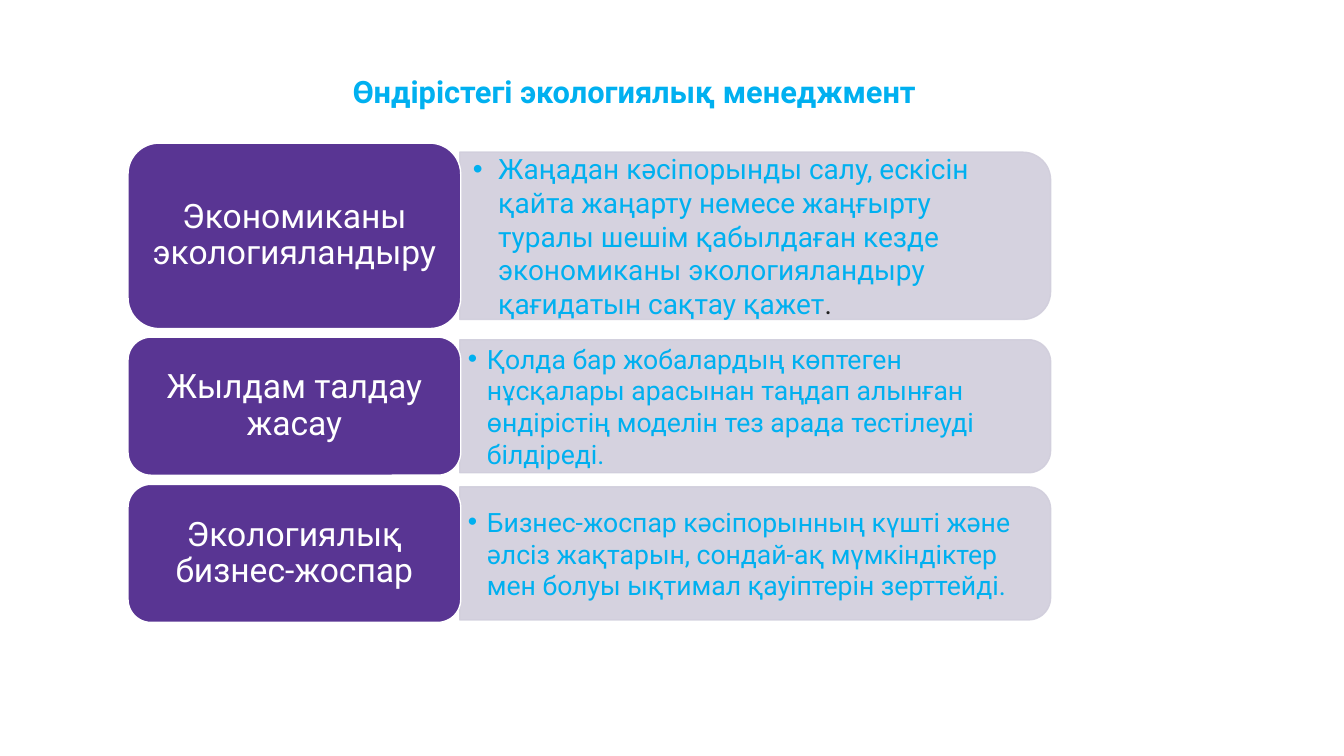
from dataclasses import dataclass

from lxml import etree
from pptx import Presentation
from pptx.dml.color import RGBColor
from pptx.enum import shapes, text
from pptx.oxml import ns
from pptx.util import Inches, Pt

SKY = RGBColor(0x00, 0xB0, 0xF0)
PURPLE = RGBColor(0x59, 0x35, 0x93)
LILAC = RGBColor(0xD1, 0xCE, 0xDC)
WHITE = RGBColor(0xFF, 0xFF, 0xFF)
DARK = RGBColor(0x20, 0x20, 0x20)

FONT = "Roboto"
LABEL_LEFT, LABEL_WIDTH = 1.27, 3.3
PANEL_LEFT, PANEL_WIDTH = 4.56, 5.86
DETAIL_WIDTH = 5.78


@dataclass(frozen=True)
class Row:
    label: str
    detail: str
    center: float
    label_height: float
    panel_height: float
    detail_height: float
    detail_size: int
    indent: float
    inset_x: float
    inset_y: float
    ending: str = ""


ROWS = [
    Row("Экономиканы экологияландыру",
        "Жаңадан кәсіпорынды салу, ескісін қайта жаңарту немесе жаңғырту туралы "
        "шешім қабылдаған кезде экономиканы экологияландыру қағидатын сақтау қажет",
        2.34, 1.84, 1.66, 1.49, 20, 0.25, 0.13, 0.07, "."),
    Row("Жылдам талдау жасау",
        "Қолда бар жобалардың көптеген нұсқалары арасынан таңдап алынған "
        "өндірістің моделін тез арада тестілеуді білдіреді.",
        4.03, 1.37, 1.32, 1.19, 19, 0.19, 0.08, 0.04),
    Row("Экологиялық бизнес-жоспар",
        "Бизнес-жоспар кәсіпорынның күшті және әлсіз жақтарын, сондай-ақ "
        "мүмкіндіктер мен болуы ықтимал қауіптерін зерттейді.",
        5.49, 1.37, 1.32, 1.19, 19, 0.19, 0.08, 0.04),
]


def apply(target, values: dict) -> None:
    for name, value in values.items():
        setattr(target, name, value)


def add_run(p, words: str, size: int, color: RGBColor, bold: bool = False) -> None:
    r = p.add_run()
    r.text = words
    apply(r.font, {"name": FONT, "size": Pt(size), "bold": bold})
    r.font.color.rgb = color


def add_block(s, kind, left: float, top: float, width: float, height: float,
              fill: RGBColor, line: RGBColor):
    sp = s.shapes.add_shape(kind, Inches(left), Inches(top), Inches(width), Inches(height))
    sp.shadow.inherit = False
    sp.fill.solid()
    sp.fill.fore_color.rgb = fill
    sp.line.color.rgb = line
    sp.line.width = Pt(1)
    return sp


def add_panel(s, row: Row) -> None:
    left = PANEL_LEFT + (PANEL_WIDTH - row.panel_height) / 2
    sp = add_block(s, shapes.MSO_SHAPE.ROUND_2_SAME_RECTANGLE, left,
                   row.center - PANEL_WIDTH / 2, row.panel_height, PANEL_WIDTH, LILAC, LILAC)
    sp.rotation = 90
    for color in sp.fill._xPr.iter(ns.qn("a:srgbClr")):
        etree.SubElement(color, ns.qn("a:alpha"), val="90000")


def add_detail(s, row: Row) -> None:
    sp = s.shapes.add_textbox(Inches(PANEL_LEFT), Inches(row.center - row.detail_height / 2),
                              Inches(DETAIL_WIDTH), Inches(row.detail_height))
    tf = sp.text_frame
    x, y = Inches(row.inset_x), Inches(row.inset_y)
    apply(tf, {"word_wrap": True, "vertical_anchor": text.MSO_ANCHOR.MIDDLE,
               "margin_left": x, "margin_right": x, "margin_top": y, "margin_bottom": y})
    p = tf.paragraphs[0]
    p.level = 1
    pPr = p._p.get_or_add_pPr()
    pPr.set("marL", str(Inches(row.indent)))
    pPr.set("indent", str(-Inches(row.indent)))
    etree.SubElement(pPr, ns.qn("a:buFont"), typeface="Arial")
    etree.SubElement(pPr, ns.qn("a:buChar"), char="•")
    add_run(p, row.detail, row.detail_size, SKY)
    if row.ending:
        add_run(p, row.ending, row.detail_size, DARK)


def add_label(s, row: Row) -> None:
    sp = add_block(s, shapes.MSO_SHAPE.ROUNDED_RECTANGLE, LABEL_LEFT,
                   row.center - row.label_height / 2, LABEL_WIDTH, row.label_height,
                   PURPLE, WHITE)
    tf = sp.text_frame
    apply(tf, {"word_wrap": True, "vertical_anchor": text.MSO_ANCHOR.MIDDLE})
    p = tf.paragraphs[0]
    apply(p, {"alignment": text.PP_ALIGN.CENTER, "line_spacing": 0.9})
    add_run(p, row.label, 24, WHITE)


def add_title(s) -> None:
    sp = s.shapes.add_textbox(Inches(0.99), Inches(0.67), Inches(10.6), Inches(0.47))
    tf = sp.text_frame
    apply(tf, {"word_wrap": True, "auto_size": text.MSO_AUTO_SIZE.SHAPE_TO_FIT_TEXT})
    p = tf.paragraphs[0]
    p.alignment = text.PP_ALIGN.CENTER
    add_run(p, "Өндірістегі экологиялық менеджмент", 22, SKY, bold=True)


def main() -> None:
    prs = Presentation()
    apply(prs, {"slide_width": Inches(13.33), "slide_height": Inches(7.5)})
    s = prs.slides.add_slide(prs.slide_layouts[6])
    add_title(s)
    for row in ROWS:
        add_panel(s, row)
        add_detail(s, row)
        add_label(s, row)
    prs.save("out.pptx")


if __name__ == "__main__":
    main()
